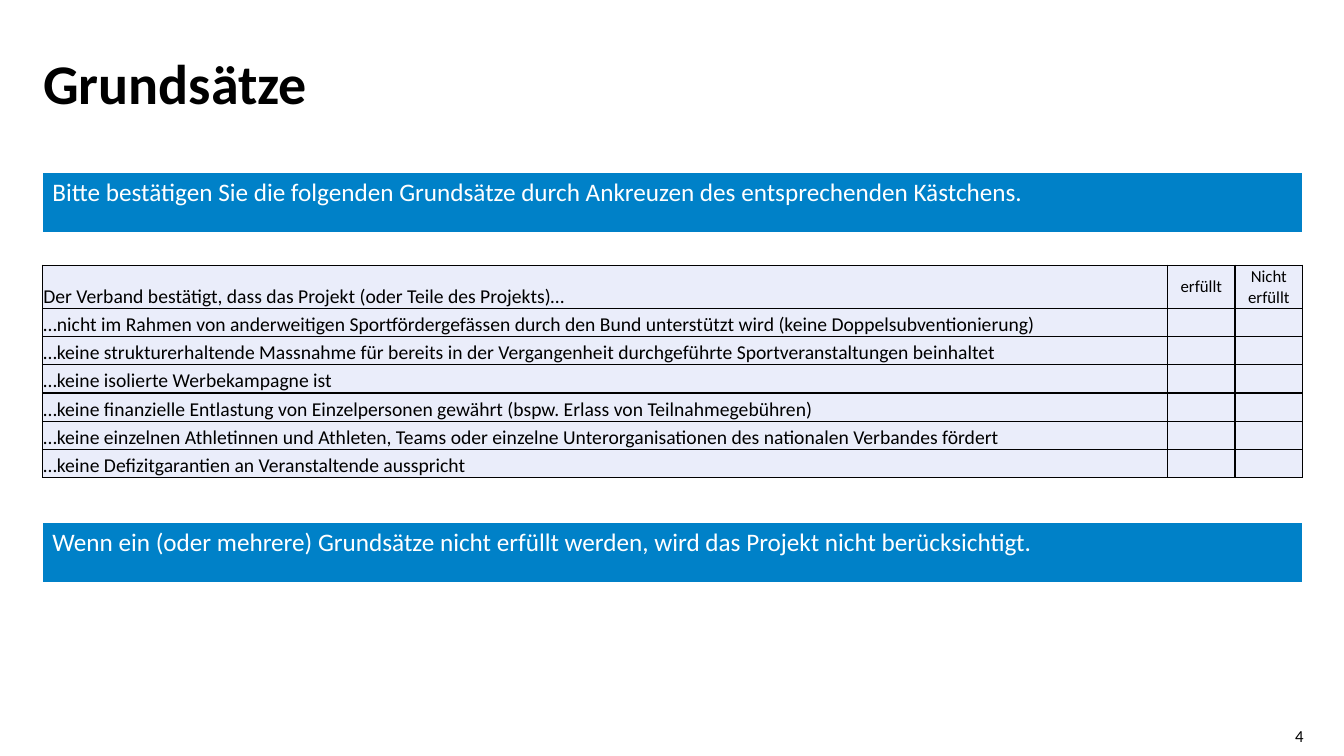
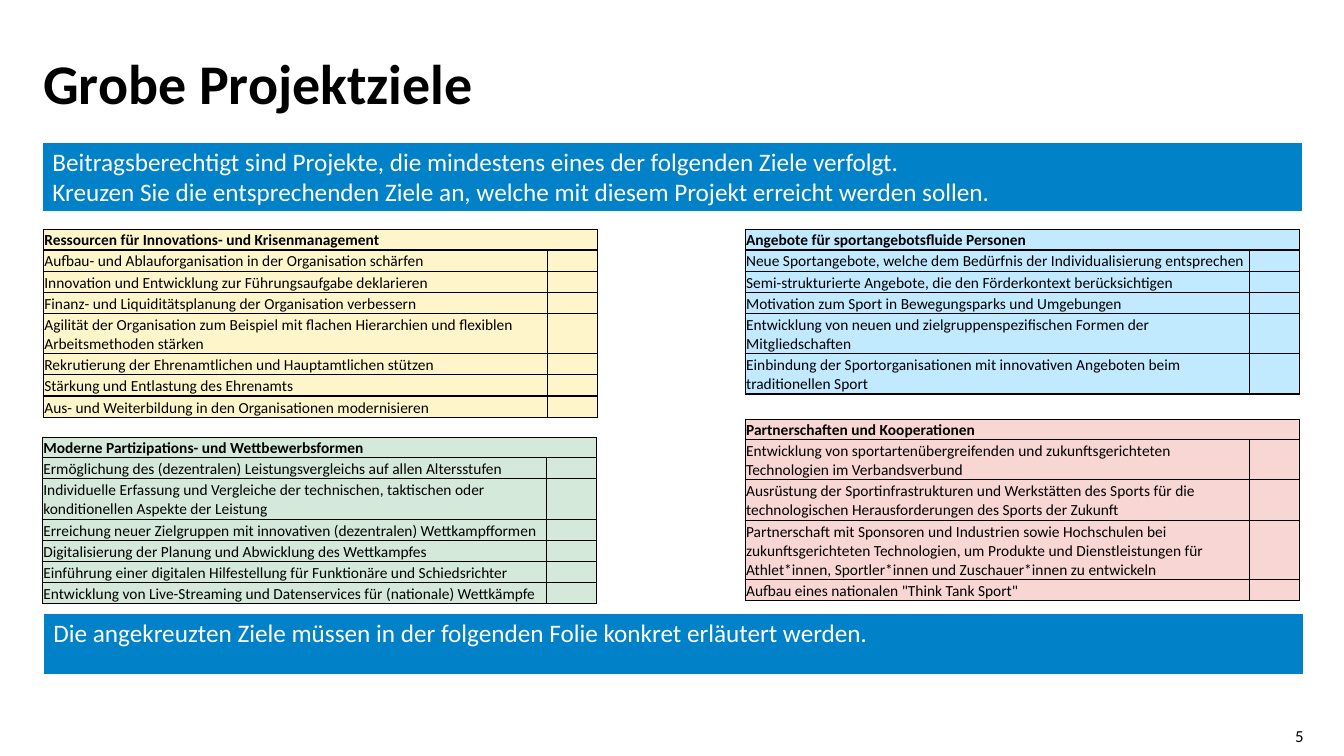
from dataclasses import dataclass

from lxml import etree
from pptx import Presentation
from pptx.dml.color import RGBColor
from pptx.enum.text import MSO_ANCHOR, PP_ALIGN
from pptx.oxml.ns import qn
from pptx.util import Inches, Pt

TOP, MIDDLE, BOTTOM = MSO_ANCHOR.TOP, MSO_ANCHOR.MIDDLE, MSO_ANCHOR.BOTTOM
LEFT, CENTER, RIGHT = PP_ALIGN.LEFT, PP_ALIGN.CENTER, PP_ALIGN.RIGHT


@dataclass(frozen=True)
class Theme:
    font: str = "Calibri"
    black: str = "000000"
    white: str = "FFFFFF"
    band: str = "0081C8"
    lavender: str = "EAEDFA"
    yellow: str = "FFF5CA"
    blue: str = "C1E9FF"
    green: str = "D4E9DA"
    red: str = "F7D6D4"
    title_size: int = 40
    band_size: int = 18
    principle_size: int = 14
    small_size: int = 12
    goal_size: int = 11


THEME = Theme()
MARGIN = 0.42
CONTENT_WIDTH = 12.5
BAND_HEIGHT = 0.61
BAND_INSETS = (0.1, 0.05, 0.1, 0.05)
CELL_INSETS = (0.01, 0.01, 0.01, 0)
GRID_BORDERS = {"L": 1, "R": 1, "T": 1, "B": 1}
BAND_BORDERS = {**GRID_BORDERS, "B": 3}
PRINCIPLE_COLUMNS = (11.16, 0.67, 0.67)
GOAL_COLUMNS = (5, 0.5)

PRINCIPLES = [
    "…nicht im Rahmen von anderweitigen Sportfördergefässen durch den Bund "
    "unterstützt wird (keine Doppelsubventionierung)",
    "…keine strukturerhaltende Massnahme für bereits in der Vergangenheit "
    "durchgeführte Sportveranstaltungen beinhaltet",
    "…keine isolierte Werbekampagne ist",
    "…keine finanzielle Entlastung von Einzelpersonen gewährt "
    "(bspw. Erlass von Teilnahmegebühren)",
    "…keine einzelnen Athletinnen und Athleten, Teams oder einzelne "
    "Unterorganisationen des nationalen Verbandes fördert",
    "…keine Defizitgarantien an Veranstaltende ausspricht",
]

# Each goal: text and number of lines it takes
RESOURCES = [
    ("Aufbau- und Ablauforganisation in der Organisation schärfen", 1),
    ("Innovation und Entwicklung zur Führungsaufgabe deklarieren", 1),
    ("Finanz- und Liquiditätsplanung der Organisation verbessern", 1),
    ("Agilität der Organisation zum Beispiel mit flachen Hierarchien und "
     "flexiblen Arbeitsmethoden stärken", 2),
    ("Rekrutierung der Ehrenamtlichen und Hauptamtlichen stützen", 1),
    ("Stärkung und Entlastung des Ehrenamts", 1),
    ("Aus- und Weiterbildung in den Organisationen modernisieren", 1),
]
OFFERS = [
    ("Neue Sportangebote, welche dem Bedürfnis der Individualisierung entsprechen", 1),
    ("Semi-strukturierte Angebote, die den Förderkontext berücksichtigen", 1),
    ("Motivation zum Sport in Bewegungsparks und Umgebungen", 1),
    ("Entwicklung von neuen und zielgruppenspezifischen Formen der "
     "Mitgliedschaften", 2),
    ("Einbindung der Sportorganisationen mit innovativen Angeboten beim "
     "traditionellen Sport", 2),
]
COMPETITION = [
    ("Ermöglichung des (dezentralen) Leistungsvergleichs auf allen Altersstufen", 1),
    ("Individuelle Erfassung und Vergleiche der technischen, taktischen oder "
     "konditionellen Aspekte der Leistung", 2),
    ("Erreichung neuer Zielgruppen mit innovativen (dezentralen) Wettkampfformen", 1),
    ("Digitalisierung der Planung und Abwicklung des Wettkampfes", 1),
    ("Einführung einer digitalen Hilfestellung für Funktionäre und Schiedsrichter", 1),
    ("Entwicklung von Live-Streaming und Datenservices für (nationale) Wettkämpfe", 1),
]
PARTNERSHIPS = [
    ("Entwicklung von sportartenübergreifenden und "
     "zukunftsgerichteten Technologien im Verbandsverbund", 2),
    ("Ausrüstung der Sportinfrastrukturen und Werkstätten des Sports für die "
     "technologischen Herausforderungen des Sports der Zukunft", 2),
    ("Partnerschaft mit Sponsoren und Industrien sowie Hochschulen bei "
     "zukunftsgerichteten Technologien, um Produkte und Dienstleistungen für "
     "Athlet*innen, Sportler*innen und Zuschauer*innen zu entwickeln", 3),
    ('Aufbau eines nationalen "Think Tank Sport"', 1),
]


# Text
def write_text(frame, text, *, size, color=THEME.black, bold=False,
               align=LEFT, line_spacing=None):
    for index, line in enumerate(text.split("\n")):
        paragraph = frame.add_paragraph() if index else frame.paragraphs[0]
        paragraph.alignment = align
        if line_spacing:
            paragraph.line_spacing = line_spacing
        if not line:
            # Keeps an empty cell from growing its row
            etree.SubElement(paragraph._p, qn("a:endParaRPr"), sz=str(size * 100))
            continue
        run = paragraph.add_run()
        run.text = line
        run.font.name = THEME.font
        run.font.size = Pt(size)
        run.font.bold = bold
        run.font.color.rgb = RGBColor.from_string(color)


def add_text_box(slide, left, top, width, height, text, anchor=TOP, **text_format):
    frame = slide.shapes.add_textbox(
        Inches(left), Inches(top), Inches(width), Inches(height)).text_frame
    frame.word_wrap = True
    frame.vertical_anchor = anchor
    frame.margin_left = frame.margin_top = 0
    frame.margin_right = frame.margin_bottom = 0
    write_text(frame, text, **text_format)


# Tables
def set_borders(cell, color, widths):
    properties = cell._tc.get_or_add_tcPr()
    for side, width in widths.items():
        line = etree.SubElement(properties, qn(f"a:ln{side}"), w=str(Pt(width)))
        fill = etree.SubElement(line, qn("a:solidFill"))
        etree.SubElement(fill, qn("a:srgbClr"), val=color)


def add_table(slide, left, top, columns, rows, fill, border, borders, insets):
    table = slide.shapes.add_table(
        len(rows), len(columns), Inches(left), Inches(top),
        Inches(sum(columns)), Inches(sum(rows))).table
    table.first_row = table.horz_banding = False
    for column, width in zip(table.columns, columns):
        column.width = Inches(width)
    for row, height in zip(table.rows, rows):
        row.height = Inches(height)
    for cell in table.iter_cells():
        set_borders(cell, border, borders)
        cell.fill.solid()
        cell.fill.fore_color.rgb = RGBColor.from_string(fill)
        (cell.margin_left, cell.margin_top,
         cell.margin_right, cell.margin_bottom) = map(Inches, insets)
    return table


def add_grid(slide, left, top, columns, rows, fill):
    return add_table(slide, left, top, columns, rows, fill,
                     THEME.black, GRID_BORDERS, CELL_INSETS)


def fill_cell(cell, text, anchor=BOTTOM, **text_format):
    cell.vertical_anchor = anchor
    write_text(cell.text_frame, text, **text_format)


def add_band(slide, top, text, left=MARGIN, height=BAND_HEIGHT):
    table = add_table(slide, left, top, [CONTENT_WIDTH], [height], THEME.band,
                      THEME.white, BAND_BORDERS, BAND_INSETS)
    fill_cell(table.cell(0, 0), text, TOP, size=THEME.band_size, color=THEME.white)


def add_principles_table(slide, top):
    table = add_grid(slide, MARGIN, top, PRINCIPLE_COLUMNS,
                     [0.43] + [0.28] * len(PRINCIPLES), THEME.lavender)
    fill_cell(table.cell(0, 0),
              "Der Verband bestätigt, dass das Projekt (oder Teile des Projekts)…",
              size=THEME.principle_size)
    for column, label in enumerate(("erfüllt", "Nicht erfüllt"), start=1):
        fill_cell(table.cell(0, column), label, MIDDLE,
                  size=THEME.small_size, align=CENTER)
    for row, principle in enumerate(PRINCIPLES, start=1):
        for column, text in enumerate((principle, "", "")):
            fill_cell(table.cell(row, column), text, size=THEME.principle_size)


def add_goal_table(slide, left, top, heading, goals, fill):
    heights = [0.2] + [0.02 + 0.19 * lines for _, lines in goals]
    table = add_grid(slide, left, top, GOAL_COLUMNS, heights, fill)
    table.cell(0, 0).merge(table.cell(0, 1))
    fill_cell(table.cell(0, 0), heading, size=THEME.goal_size, bold=True)
    for row, (goal, _) in enumerate(goals, start=1):
        for column, text in enumerate((goal, "")):
            fill_cell(table.cell(row, column), text, size=THEME.goal_size)


# Slides
def add_slide(presentation, title, number):
    slide = presentation.slides.add_slide(presentation.slide_layouts[6])
    add_text_box(slide, 0.43, 0.56, 10, 0.85, title,
                 size=THEME.title_size, bold=True, line_spacing=0.9)
    add_text_box(slide, 12.46, 7.2, 0.47, 0.2, str(number), MIDDLE,
                 size=THEME.small_size, align=RIGHT)
    return slide


def add_principles_slide(presentation):
    slide = add_slide(presentation, "Grundsätze", 4)
    add_band(slide, 1.71, "Bitte bestätigen Sie die folgenden Grundsätze durch "
                          "Ankreuzen des entsprechenden Kästchens.")
    add_principles_table(slide, 2.63)
    add_band(slide, 5.18, "Wenn ein (oder mehrere) Grundsätze nicht erfüllt werden, "
                          "wird das Projekt nicht berücksichtigt.")


def add_goals_slide(presentation):
    slide = add_slide(presentation, "Grobe Projektziele", 5)
    add_band(slide, 1.41,
             "Beitragsberechtigt sind Projekte, die mindestens eines der folgenden "
             "Ziele verfolgt.\nKreuzen Sie die entsprechenden Ziele an, welche mit "
             "diesem Projekt erreicht werden sollen.", height=0.7)
    for left, top, heading, goals, fill in (
        (0.43, 2.28, "Ressourcen für Innovations- und Krisenmanagement",
         RESOURCES, THEME.yellow),
        (7.39, 2.28, "Angebote für sportangebotsfluide Personen",
         OFFERS, THEME.blue),
        (0.42, 4.34, "Moderne Partizipations- und Wettbewerbsformen",
         COMPETITION, THEME.green),
        (7.39, 4.16, "Partnerschaften und Kooperationen",
         PARTNERSHIPS, THEME.red),
    ):
        add_goal_table(slide, left, top, heading, goals, fill)
    add_band(slide, 6.09, "Die angekreuzten Ziele müssen in der folgenden Folie "
                          "konkret erläutert werden.", left=0.43)


def main():
    presentation = Presentation()
    presentation.slide_width = Inches(13.33)
    presentation.slide_height = Inches(7.5)
    add_principles_slide(presentation)
    add_goals_slide(presentation)
    presentation.save("out.pptx")


if __name__ == "__main__":
    main()
